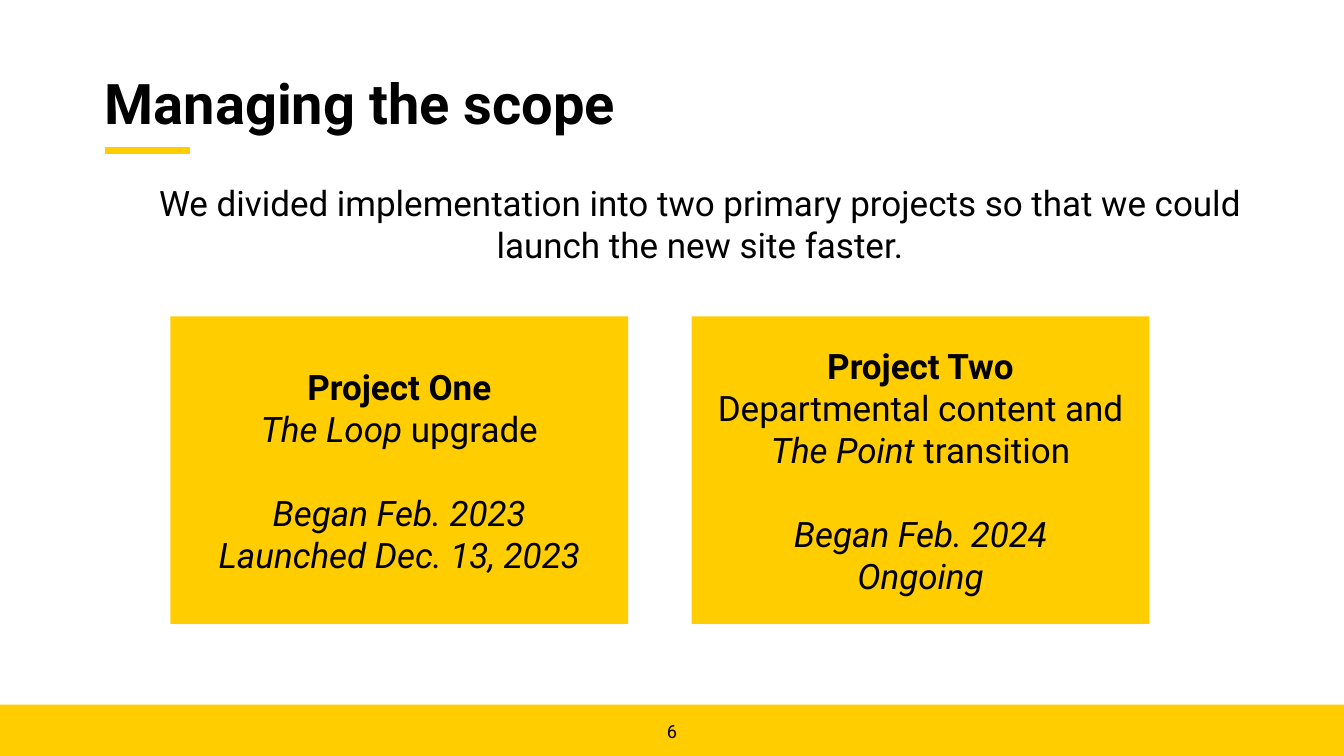
from dataclasses import dataclass

from lxml.etree import SubElement
from pptx import Presentation
from pptx.dml.color import RGBColor
from pptx.enum.shapes import MSO_CONNECTOR, MSO_SHAPE
from pptx.enum.text import MSO_ANCHOR, PP_ALIGN
from pptx.oxml.ns import qn
from pptx.shapes.base import BaseShape
from pptx.slide import Slide
from pptx.text.text import TextFrame
from pptx.util import Inches, Pt

GOLD = RGBColor(0xFF, 0xCD, 0x00)
BLACK = RGBColor(0, 0, 0)
WIDE, HIGH = Inches(13.33), Inches(7.5)
FONT = {"name": "Roboto", "size": Pt(25), "bold": False, "italic": False}
BOLD = {"bold": True}
SLANT = {"italic": True}
BARE = {"margin_left": 0, "margin_right": 0, "margin_top": 0, "margin_bottom": 0}
MID = {"vertical_anchor": MSO_ANCHOR.MIDDLE, "word_wrap": True}


@dataclass
class Area:
    left: float
    top: float
    width: float
    height: float

    def frame(self) -> tuple[int, int, int, int]:
        return (across(self.left), down(self.top), across(self.width), down(self.height))


@dataclass
class Run:
    text: str
    style: dict


@dataclass
class Line:
    runs: list[Run]
    gap: float = 0


@dataclass
class Card:
    lines: list[Line]


def across(share: float) -> int:
    return int(WIDE * share / 100)


def down(share: float) -> int:
    return int(HIGH * share / 100)


def apply(target: object, values: dict) -> None:
    for name, value in values.items():
        setattr(target, name, value)


def write(frame: TextFrame, lines: list[Line], align: PP_ALIGN = PP_ALIGN.CENTER) -> None:
    for index, line in enumerate(lines):
        para = frame.add_paragraph() if index else frame.paragraphs[0]
        apply(para, {"alignment": align, "space_before": Pt(line.gap)})
        for part in line.runs:
            run = para.add_run()
            run.text = part.text
            apply(run.font, FONT | part.style)
            run.font.color.rgb = BLACK


def block(slide: Slide, area: Area) -> BaseShape:
    shape = slide.shapes.add_shape(MSO_SHAPE.RECTANGLE, *area.frame())
    shape.shadow.inherit = False
    shape.fill.solid()
    shape.fill.fore_color.rgb = GOLD
    shape.line.fill.background()
    return shape


def accent(slide: Slide) -> None:
    level = down(19.87)
    rule = slide.shapes.add_connector(
        MSO_CONNECTOR.STRAIGHT, across(7.8), level, across(14.1), level)
    rule.line.color.rgb = GOLD
    rule.line.width = Pt(5)
    SubElement(rule._element.spPr, qn("a:effectLst"))


def label(slide: Slide, area: Area, text: str, style: dict, form: dict) -> None:
    box = slide.shapes.add_textbox(*area.frame())
    apply(box.text_frame, {"word_wrap": True} | form)
    write(box.text_frame, [Line([Run(text, style)])])


def head(slide: Slide, area: Area, text: str) -> None:
    title = slide.shapes.title
    apply(title, dict(zip(("left", "top", "width", "height"), area.frame())))
    apply(title.text_frame, BARE | MID)
    write(title.text_frame, [Line([Run(text, BOLD | {"size": Pt(40)})])], PP_ALIGN.LEFT)
    title.text_frame.paragraphs[0].line_spacing = 0.9


CARDS = [
    Card([
        Line([Run("Project One", BOLD)]),
        Line([Run("The Loop", SLANT), Run(" upgrade", {})]),
        Line([Run("Began Feb. 2023", SLANT)], 30),
        Line([Run("Launched Dec. 13, 2023", SLANT)]),
    ]),
    Card([
        Line([Run("Project Two", BOLD)]),
        Line([Run("Departmental content and ", {}), Run("The Point", SLANT),
              Run(" transition", {})]),
        Line([Run("Began Feb. 2024", SLANT)], 30),
        Line([Run("Ongoing", SLANT)]),
    ]),
]


def main() -> None:
    deck = Presentation()
    apply(deck, {"slide_width": WIDE, "slide_height": HIGH})
    slide = deck.slides.add_slide(deck.slide_layouts[5])
    block(slide, Area(0, 93.2, 100, 6.8))
    accent(slide)
    label(slide, Area(47.56, 95.33, 4.88, 3.47), "6", {"size": Pt(13)}, BARE)
    head(slide, Area(7.8, 7.73, 84.4, 12.67), "Managing the scope")
    label(slide, Area(7.8, 23.33, 88.52, 12.53),
          "We divided implementation into two primary projects "
          "so that we could launch the new site faster.", {}, {})
    for index, card in enumerate(CARDS):
        shape = block(slide, Area(12.68 + 38.78 * index, 41.87, 34.06, 40.67))
        apply(shape.text_frame, MID)
        write(shape.text_frame, card.lines)
    deck.save("out.pptx")


if __name__ == "__main__":
    main()
